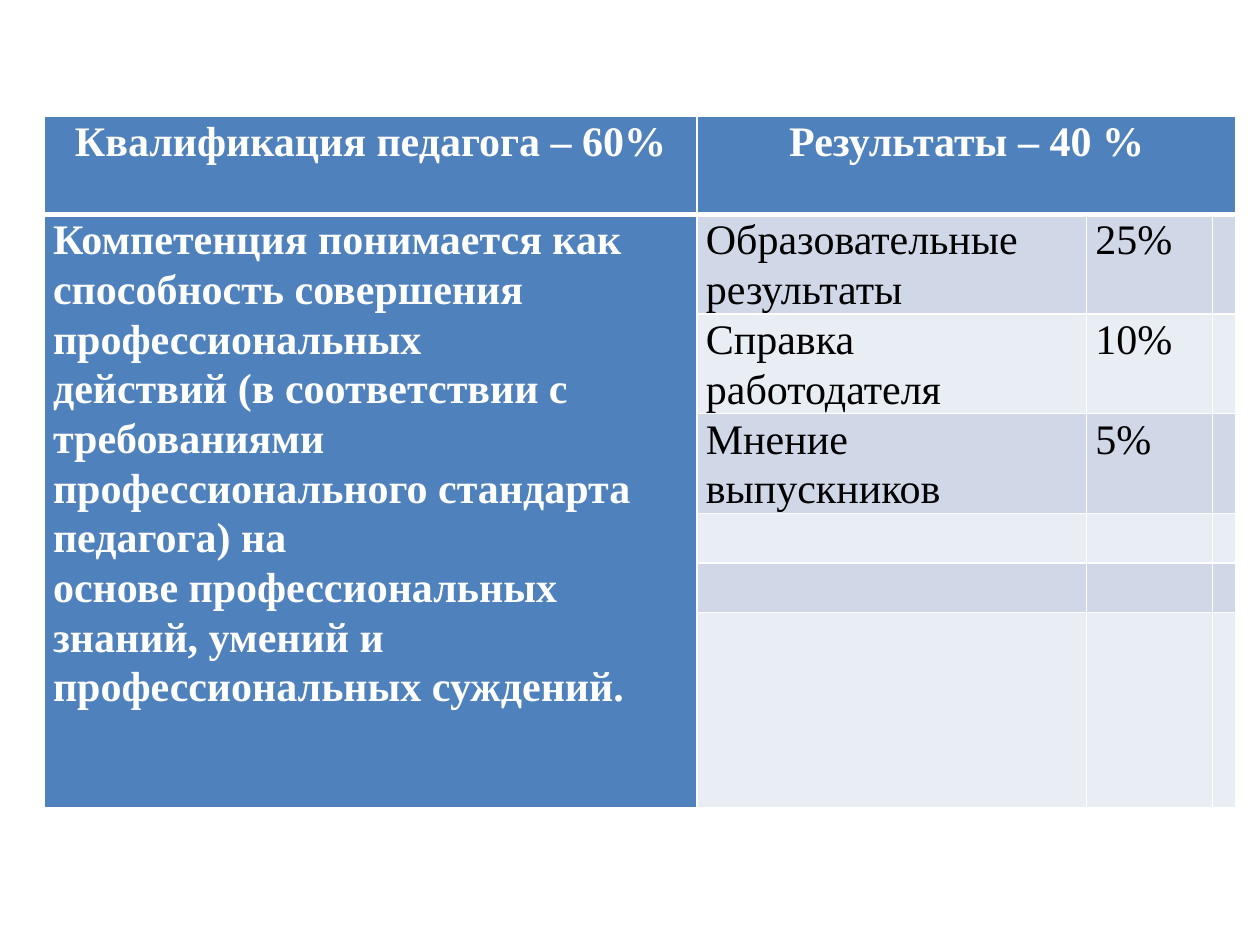
from dataclasses import dataclass

from lxml import etree
from pptx import Presentation
from pptx import util as u
from pptx.dml.color import RGBColor
from pptx.enum import text
from pptx.oxml import ns

COLORS = {
    "header": "4F81BD",
    "band": "D0D8E8",
    "light": "E9EDF4",
    "white": "FFFFFF",
    "black": "000000",
}
FONT = "Times New Roman"
COLS = [13.16, 7.85, 2.54, 0.48]
ROWS = [1.98, 2.01, 2.01, 2.01, 1, 1, 3.94]


@dataclass
class CellStyle:
    fill: str
    color: str = "black"
    bold: bool = False
    align: text.PP_ALIGN = text.PP_ALIGN.LEFT


@dataclass
class Result:
    name: str = ""
    share: str = ""


HEADER = CellStyle("header", "white", True, text.PP_ALIGN.CENTER)
COMPETENCE = CellStyle("header", "white", True)
BANDS = [CellStyle("band"), CellStyle("light")]

COMPETENCE_TEXT = [
    "Компетенция понимается как способность совершения профессиональных",
    "действий (в соответствии с требованиями профессионального стандарта педагога) на",
    "основе профессиональных знаний, умений и профессиональных суждений.",
]
RESULTS = [
    Result("Образовательные результаты", "25%"),
    Result("Справка работодателя", "10%"),
    Result("Мнение выпускников", "5%"),
    Result(),
    Result(),
    Result(),
]


def rgb(name: str) -> RGBColor:
    return RGBColor.from_string(COLORS[name])


def set_borders(cell, row: int) -> None:
    tcPr = cell._tc.get_or_add_tcPr()
    widths = {"L": 1, "R": 1, "T": 3 if row == 1 else 1, "B": 3 if row == 0 else 1}
    for side, width in widths.items():
        ln = etree.SubElement(tcPr, ns.qn(f"a:ln{side}"), w=str(u.Pt(width)))
        fill = etree.SubElement(ln, ns.qn("a:solidFill"))
        etree.SubElement(fill, ns.qn("a:srgbClr"), val=COLORS["white"])


def fill_cell(cell, lines: list[str], style: CellStyle) -> None:
    cell.margin_left = cell.margin_right = u.Cm(0.18)
    cell.margin_top = cell.margin_bottom = 0
    cell.fill.solid()
    cell.fill.fore_color.rgb = rgb(style.fill)
    tf = cell.text_frame
    tf.text = "\n".join(lines)
    for p in tf.paragraphs:
        p.alignment = style.align
        p.line_spacing = 1.07
        p.font.name = FONT
        p.font.size = u.Pt(24)
        p.font.bold = style.bold
        p.font.color.rgb = rgb(style.color)


def add_assessment_table(s) -> None:
    frame = s.shapes.add_table(
        len(ROWS), len(COLS), u.Cm(0.89), u.Cm(2.34), u.Cm(sum(COLS)), u.Cm(sum(ROWS))
    )
    table = frame.table
    table.first_row = table.horz_banding = False
    for column, width in zip(table.columns, COLS):
        column.width = u.Cm(width)
    for i, (row, height) in enumerate(zip(table.rows, ROWS)):
        row.height = u.Cm(height)
        for cell in row.cells:
            set_borders(cell, i)

    table.cell(0, 1).merge(table.cell(0, 3))
    table.cell(1, 0).merge(table.cell(6, 0))
    fill_cell(table.cell(0, 0), ["Квалификация педагога – 60%"], HEADER)
    fill_cell(table.cell(0, 1), ["Результаты – 40 %"], HEADER)
    fill_cell(table.cell(1, 0), COMPETENCE_TEXT, COMPETENCE)
    for i, result in enumerate(RESULTS):
        for j, value in enumerate([result.name, result.share, ""], start=1):
            fill_cell(table.cell(i + 1, j), [value], BANDS[i % 2])


def main() -> None:
    prs = Presentation()
    prs.slide_width, prs.slide_height = u.Cm(25.4), u.Cm(19.05)
    s = prs.slides.add_slide(prs.slide_layouts[6])
    add_assessment_table(s)
    prs.save("out.pptx")


if __name__ == "__main__":
    main()
